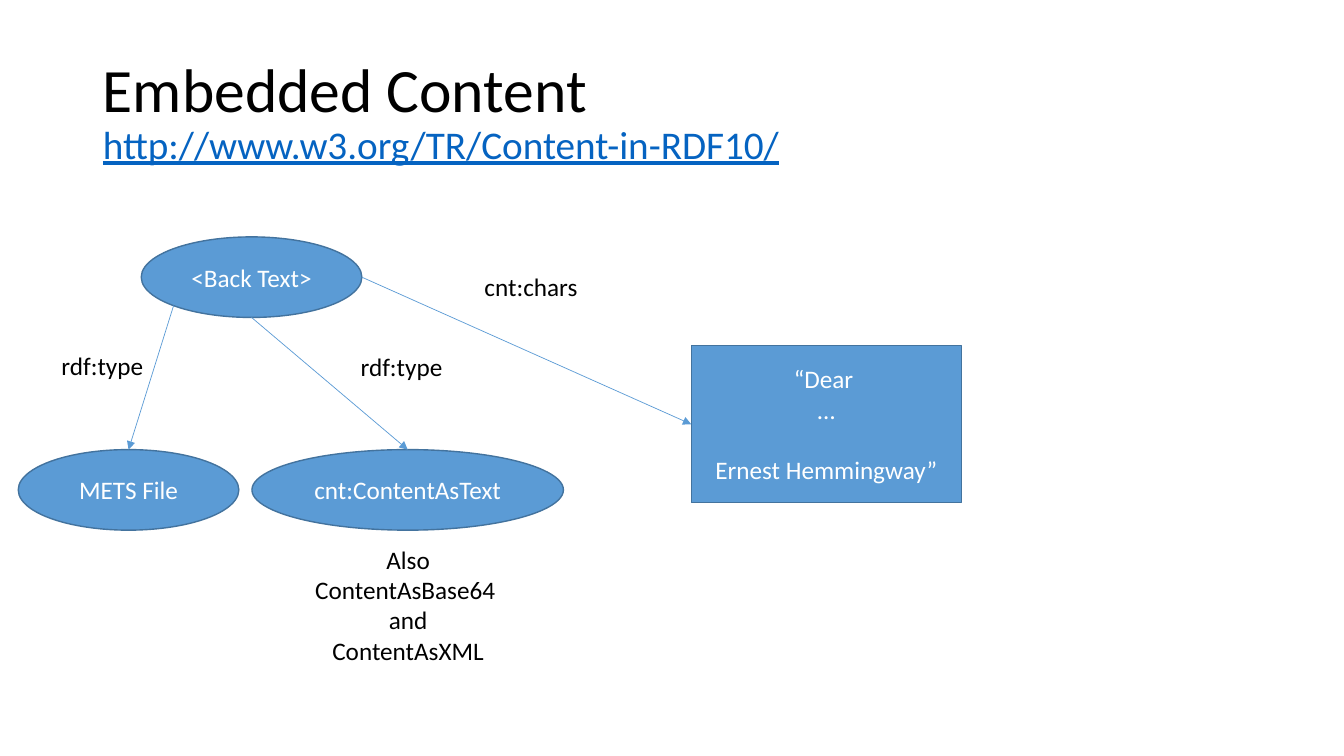
from dataclasses import dataclass
from math import sqrt

from lxml.etree import SubElement
from pptx import Presentation
from pptx.dml.color import RGBColor
from pptx.enum.shapes import MSO_CONNECTOR, MSO_SHAPE
from pptx.enum.text import MSO_ANCHOR as Anchor, MSO_AUTO_SIZE as AutoSize, PP_ALIGN as Align
from pptx.oxml.ns import qn
from pptx.util import Cm, Pt


@dataclass(frozen=True)
class Theme:
    font: str = "Calibri"
    text: RGBColor = RGBColor(0, 0, 0)
    node_text: RGBColor = RGBColor(255, 255, 255)
    node: RGBColor = RGBColor(0x5B, 0x9B, 0xD5)
    outline: RGBColor = RGBColor(0x43, 0x73, 0x9E)
    link: RGBColor = RGBColor(0x05, 0x63, 0xC1)
    title_size: Pt = Pt(44)
    link_size: Pt = Pt(28)
    body_size: Pt = Pt(18)
    line_gap: Pt = Pt(21.6)


THEME = Theme()


def write_lines(frame, lines, color, align):
    for index, line in enumerate(lines):
        paragraph = frame.paragraphs[0] if index == 0 else frame.add_paragraph()
        paragraph.text = line
        paragraph.alignment = align
        paragraph.font.name = THEME.font
        paragraph.font.size = THEME.body_size
        paragraph.font.color.rgb = color


def add_node(slide, kind, left, top, width, height, lines):
    node = slide.shapes.add_shape(kind, left, top, width, height)
    node.shadow.inherit = False
    node.fill.solid()
    node.fill.fore_color.rgb = THEME.node
    node.line.color.rgb = THEME.outline
    node.line.width = Pt(1)
    node.text_frame.word_wrap = True
    node.text_frame.vertical_anchor = Anchor.MIDDLE
    write_lines(node.text_frame, lines, THEME.node_text, Align.CENTER)
    return node


def add_label(slide, left, top, width, height, lines, align=Align.LEFT):
    label = slide.shapes.add_textbox(left, top, width, height)
    label.text_frame.word_wrap = False
    label.text_frame.auto_size = AutoSize.SHAPE_TO_FIT_TEXT
    write_lines(label.text_frame, lines, THEME.text, align)


def add_arrow(slide, start, target, side):
    arrow = slide.shapes.add_connector(MSO_CONNECTOR.STRAIGHT, *start, *start)
    arrow.end_connect(target, side)
    arrow.line.color.rgb = THEME.node
    arrow.line.width = Pt(0.5)
    SubElement(arrow.line._get_or_add_ln(), qn("a:tailEnd"), type="triangle")
    SubElement(arrow._element.spPr, qn("a:effectLst"))


def fill_title(slide, left, top, width, height):
    title = slide.shapes.title
    title.left, title.top, title.width, title.height = left, top, width, height
    frame = title.text_frame
    frame.word_wrap = True
    frame.auto_size = AutoSize.NONE
    frame.vertical_anchor = Anchor.MIDDLE
    paragraph = frame.paragraphs[0]
    paragraph.alignment = Align.LEFT
    paragraph.line_spacing = 0.9
    paragraph.font.name = THEME.font
    paragraph.font.size = THEME.title_size
    paragraph.font.color.rgb = THEME.text
    heading = paragraph.add_run()
    heading.text = "Embedded Content"
    paragraph.add_line_break()
    address = paragraph.add_run()
    address.text = "http://www.w3.org/TR/Content-in-RDF10/"
    address.font.size = THEME.link_size
    address.font.color.rgb = THEME.link
    address.font.underline = True


def draw_graph(slide, left, top):
    ellipse_width, ellipse_height = Cm(5.56), Cm(2.03)
    lower_row = top + Cm(5.36)

    # Nodes
    source = add_node(slide, MSO_SHAPE.OVAL, left + Cm(3.1), top,
                      ellipse_width, ellipse_height, ["<Back Text>"])
    letter = add_node(slide, MSO_SHAPE.RECTANGLE, left + Cm(16.96), top + Cm(2.74),
                      Cm(6.81), Cm(3.96), ["“Dear ", "…", "Ernest Hemmingway”"])
    letter.text_frame.paragraphs[-1].space_before = THEME.line_gap
    mets_file = add_node(slide, MSO_SHAPE.OVAL, left, lower_row,
                         ellipse_width, ellipse_height, ["METS File"])
    content_type = add_node(slide, MSO_SHAPE.OVAL, left + Cm(5.89), lower_row,
                            Cm(7.85), ellipse_height, ["cnt:ContentAsText"])

    # Arrows leave the source ellipse at its lower left, bottom and right
    center_x = source.left + source.width // 2
    center_y = source.top + source.height // 2
    diagonal = 1 / sqrt(8)
    lower_left = (int(center_x - source.width * diagonal),
                  int(center_y + source.height * diagonal))
    add_arrow(slide, lower_left, mets_file, 0)
    add_arrow(slide, (center_x, source.top + source.height), content_type, 0)
    add_arrow(slide, (source.left + source.width, center_y), letter, 1)

    # Arrow labels
    for x, y, width, wording in [(0.84, 2.74, 2.59, "rdf:type"),
                                 (8.38, 2.77, 2.59, "rdf:type"),
                                 (11.5, 0.74, 2.87, "cnt:chars")]:
        add_label(slide, left + Cm(x), top + Cm(y), Cm(width), Cm(1.02), [wording])

    # Note under the content type
    add_label(slide, left + Cm(7.21), top + Cm(7.62), Cm(5.23), Cm(3.33),
              ["Also", "ContentAsBase64 ", "and", "ContentAsXML"], Align.CENTER)


def main():
    presentation = Presentation()
    presentation.slide_width, presentation.slide_height = Cm(33.87), Cm(19.05)
    slide = presentation.slides.add_slide(presentation.slide_layouts[5])
    fill_title(slide, Cm(2.34), Cm(1.02), Cm(29.21), Cm(3.68))
    draw_graph(slide, Cm(0.46), Cm(5.97))
    presentation.save("out.pptx")


if __name__ == "__main__":
    main()
